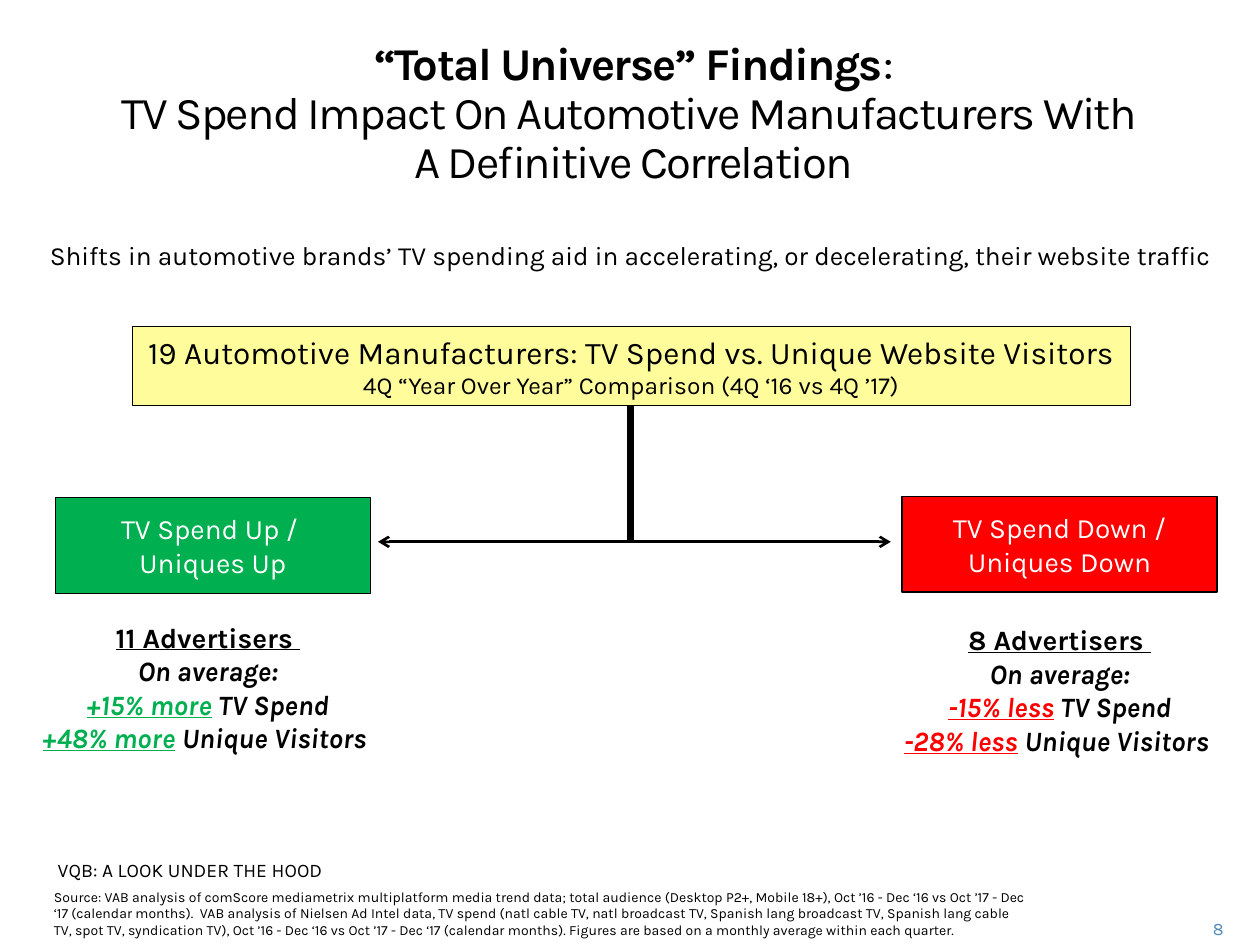
import pptx
import pptx.util
import pptx.dml.color
import pptx.enum.shapes
import pptx.enum.text
import lxml.etree

FONT = "Karla"
BLACK, WHITE, GREEN, RED = "000000", "FFFFFF", "00B050", "FF0000"
ALIGN = pptx.enum.text.PP_ALIGN
ANCHOR = pptx.enum.text.MSO_ANCHOR
SHAPE = pptx.enum.shapes.MSO_SHAPE


def rgb(hex_colour):
    return pptx.dml.color.RGBColor.from_string(hex_colour)


def inches(*values):
    return [pptx.util.Inches(v) for v in values]


def write(tf, paragraphs, size, colour=BLACK, align=ALIGN.CENTER, anchor=ANCHOR.TOP):
    """Fill a frame; each paragraph is a list of (text, overrides) runs."""
    tf.word_wrap = True
    tf.auto_size = pptx.enum.text.MSO_AUTO_SIZE.NONE
    tf.vertical_anchor = anchor
    for i, runs in enumerate(paragraphs):
        p = tf.paragraphs[0] if i == 0 else tf.add_paragraph()
        p.alignment = align
        for text, style in runs:
            r = p.add_run()
            r.text = text
            r.font.name = FONT
            r.font.size = pptx.util.Pt(style.get("size", size))
            r.font.color.rgb = rgb(style.get("colour", colour))
            r.font.bold = style.get("bold", False)
            r.font.italic = style.get("italic", False)
            r.font.underline = style.get("underline", False)


def add_text(s, box, paragraphs, size, **options):
    write(s.shapes.add_textbox(*inches(*box)).text_frame, paragraphs, size, **options)


def add_box(s, box, fill):
    sp = s.shapes.add_shape(SHAPE.RECTANGLE, *inches(*box))
    sp.shadow.inherit = False
    sp.fill.solid()
    sp.fill.fore_color.rgb = rgb(fill)
    sp.line.color.rgb = rgb(BLACK)
    sp.line.width = pptx.util.Pt(0.75)
    return sp


def add_arrow(s, x1, x2, y):
    sp = s.shapes.add_connector(
        pptx.enum.shapes.MSO_CONNECTOR.STRAIGHT, *inches(x1, y, x2, y))
    sp.line.color.rgb = rgb(BLACK)
    sp.line.width = pptx.util.Pt(1.5)
    ns = pptx.oxml.ns.qn
    lxml.etree.SubElement(sp.line._get_or_add_ln(), ns("a:tailEnd"), type="arrow")
    lxml.etree.SubElement(sp._element.spPr, ns("a:effectLst"))


def add_title(s, box):
    title = s.shapes.title
    title.left, title.top, title.width, title.height = inches(*box)
    tf = title.text_frame
    write(tf, [
        [("“Total Universe” Findings", {"bold": True}), (":", {})],
        [("TV Spend Impact On Automotive Manufacturers With ", {})],
        [("A Definitive Correlation", {})],
    ], 26)
    for p in tf.paragraphs[1:]:
        p.line_spacing = pptx.util.Pt(28)
    for p in tf.paragraphs:
        for r in p.runs:
            r.font._element.set("spc", "-100")


def add_split(s, box, stem_bottom, left_tip, right_tip):
    """Heading box with a stem that branches into two arrows."""
    left, top, width, height = box
    centre, bottom = left + width / 2, top + height
    write(add_box(s, box, "FFFD9B").text_frame, [
        [("19 Automotive Manufacturers: TV Spend vs. Unique Website Visitors", {})],
        [("4Q “Year Over Year” Comparison (4Q ‘16 vs 4Q ’17)", {"size": 14})],
    ], 18)
    for tip in (left_tip, right_tip):
        add_arrow(s, centre, tip, stem_bottom)
    add_box(s, (centre - 0.03, bottom, 0.05, stem_bottom - bottom), BLACK)


def add_outcome(s, box, text_box, colour, label, count, spend, visitors):
    """Coloured label with the advertisers' averages below it."""
    write(add_box(s, box, colour).text_frame, [[(line, {})] for line in label],
          16, colour=WHITE, anchor=ANCHOR.MIDDLE)
    strong = {"bold": True, "italic": True}
    change = {**strong, "underline": True, "colour": colour}
    add_text(s, text_box, [
        [(f"{count} Advertisers ", {"bold": True, "underline": True})],
        [("On average:", strong)],
        [(spend, change), (" TV Spend", strong)],
        [(visitors, change), (" ", {}), ("Unique Visitors ", strong)],
    ], 16, anchor=ANCHOR.MIDDLE)


def add_footer(s):
    add_text(s, (0.36, 6.76, 3.13, 0.47), [[("VQB: A LOOK UNDER THE HOOD", {})]],
             11, align=ALIGN.LEFT)
    add_text(s, (0.33, 7, 7.94, 0.5), [[(
        "Source: VAB analysis of comScore mediametrix multiplatform media trend data; "
        "total audience (Desktop P2+, Mobile 18+), Oct ’16 - Dec ‘16 vs Oct ’17 - Dec ‘17 "
        "(calendar months).  VAB analysis of Nielsen Ad Intel data, TV spend (natl cable TV, "
        "natl broadcast TV, Spanish lang broadcast TV, Spanish lang cable TV, spot TV, "
        "syndication TV), Oct ’16 - Dec ‘16 vs Oct ’17 - Dec ‘17 (calendar months). "
        "Figures are based on a monthly average within each quarter.", {})]],
        8, align=ALIGN.LEFT)
    add_text(s, (9.2, 7.24, 0.61, 0.25), [[("8", {})]], 10,
             colour="508ABA", align=ALIGN.RIGHT)


def main():
    prs = pptx.Presentation()
    prs.slide_width, prs.slide_height = inches(10, 7.5)
    s = prs.slides.add_slide(prs.slide_layouts.get_by_name("Title Only"))
    add_title(s, (0.22, 0.23, 9.62, 1.32))
    add_text(s, (0.19, 1.85, 9.63, 0.35), [[(
        "Shifts in automotive brands’ TV spending aid in accelerating, "
        "or decelerating, their website traffic", {})]], 15)
    add_split(s, (1.05, 2.59, 7.92, 0.63), 4.3, 3, 7.07)
    add_outcome(s, (0.44, 3.95, 2.5, 0.76), (0.01, 4.87, 3.28, 1.17), GREEN,
                ["TV Spend Up / ", "Uniques Up"], 11, "+15% more", "+48% more")
    add_outcome(s, (7.16, 3.94, 2.5, 0.76), (6.87, 4.89, 3.08, 1.17), RED,
                ["TV Spend Down / Uniques Down"], 8, "-15% less", "-28% less")
    add_footer(s)
    prs.save("out.pptx")


if __name__ == "__main__":
    main()
